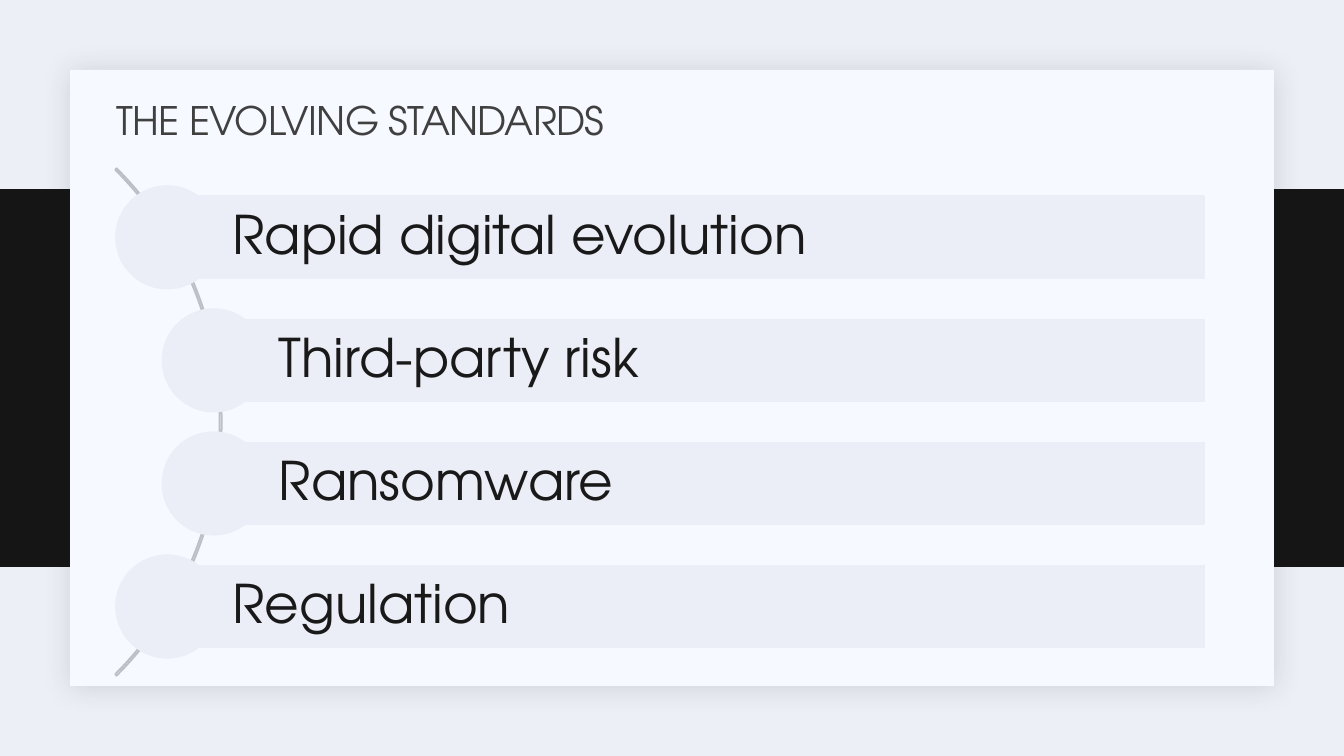
from dataclasses import dataclass

from lxml.etree import SubElement
from pptx import Presentation
from pptx.dml.color import RGBColor
from pptx.enum.shapes import MSO_SHAPE
from pptx.enum.text import MSO_ANCHOR, PP_ALIGN
from pptx.oxml.ns import qn
from pptx.shapes.autoshape import Shape
from pptx.slide import Slide
from pptx.util import Pt

FONT = "TeX Gyre Adventor"
BACKGROUND = RGBColor(0xED, 0xEF, 0xF7)
BAND = RGBColor(0x14, 0x15, 0x14)
PANEL = RGBColor(0xF6, 0xF9, 0xFF)
BAR = RGBColor(0xEC, 0xEE, 0xF7)
ARC = RGBColor(0xBD, 0xBF, 0xC6)
TITLE = RGBColor(0x40, 0x40, 0x40)
TEXT = RGBColor(0x19, 0x19, 0x19)

# List geometry, in points
CENTER_Y = 301.4
PITCH = 87.9
BAR_HEIGHT = 58.6
BAR_RIGHT = 860.4
OUTER_X, INNER_X = 119.5, 152.7
CIRCLE = 73.2
ARC_SIZE = 512.6
ARC_CENTER_X = -97.9


@dataclass(frozen=True)
class Item:
    text: str
    left: float


ITEMS = [
    Item("Rapid digital evolution", OUTER_X),
    Item("Third-party risk", INNER_X),
    Item("Ransomware", INNER_X),
    Item("Regulation", OUTER_X),
]


def add_box(s: Slide, kind: MSO_SHAPE, left: float, top: float, width: float,
            height: float, fill: RGBColor | None = None,
            line: RGBColor | None = None) -> Shape:
    sp = s.shapes.add_shape(kind, Pt(left), Pt(top), Pt(width), Pt(height))
    sp.shadow.inherit = False
    if fill is None:
        sp.fill.background()
    else:
        sp.fill.solid()
        sp.fill.fore_color.rgb = fill
    if line is None:
        sp.line.fill.background()
    else:
        sp.line.color.rgb = line
        sp.line.width = Pt(1.25)
    return sp


def add_shadow(sp: Shape) -> None:
    effects = sp.element.spPr.find(qn("a:effectLst"))
    shadow = SubElement(effects, qn("a:outerShdw"), blurRad=str(Pt(20)),
                        dist=str(Pt(2)), dir="2700000", algn="ctr", rotWithShape="0")
    color = SubElement(shadow, qn("a:srgbClr"), val="1F2125")
    SubElement(color, qn("a:alpha"), val="15000")


def set_text(sp: Shape, text: str, size: float, color: RGBColor) -> None:
    tf = sp.text_frame
    tf.word_wrap = True
    tf.vertical_anchor = MSO_ANCHOR.MIDDLE
    p = tf.paragraphs[0]
    p.alignment = PP_ALIGN.LEFT
    p.line_spacing = 0.9
    r = p.add_run()
    r.text = text
    r.font.name = FONT
    r.font.size = Pt(size)
    r.font.color.rgb = color


def add_title(s: Slide, text: str) -> None:
    sp = s.shapes.title
    sp.left, sp.top, sp.width, sp.height = Pt(76.3), Pt(64.8), Pt(450), Pt(46)
    set_text(sp, text, 28, TITLE)
    r = sp.text_frame.paragraphs[0].runs[0]
    r.font._element.set("spc", "-50")
    # Bring the title in front of the panel
    sp.element.getparent().append(sp.element)


def add_item(s: Slide, item: Item, center_y: float) -> None:
    bar = add_box(s, MSO_SHAPE.RECTANGLE, item.left, center_y - BAR_HEIGHT / 2,
                  BAR_RIGHT - item.left, BAR_HEIGHT, BAR, BAR)
    set_text(bar, item.text, 38, TEXT)
    tf = bar.text_frame
    tf.margin_left = Pt(46.5)
    tf.margin_top = tf.margin_right = tf.margin_bottom = Pt(8)
    tf.paragraphs[0].space_after = Pt(13.3)
    add_box(s, MSO_SHAPE.OVAL, item.left - CIRCLE / 2, center_y - CIRCLE / 2,
            CIRCLE, CIRCLE, BAR, BAR)


def main() -> None:
    prs = Presentation()
    prs.slide_width, prs.slide_height = Pt(960), Pt(540)
    s = prs.slides.add_slide(prs.slide_layouts[5])
    s.background.fill.solid()
    s.background.fill.fore_color.rgb = BACKGROUND

    # Backdrop
    add_box(s, MSO_SHAPE.RECTANGLE, 0, 135, 960, 270, BAND)
    add_shadow(add_box(s, MSO_SHAPE.RECTANGLE, 50, 50, 860, 440, PANEL))
    add_title(s, "THE EVOLVING STANDARDS")

    # Arc behind the list
    arc = add_box(s, MSO_SHAPE.BLOCK_ARC, ARC_CENTER_X - ARC_SIZE / 2,
                  CENTER_Y - ARC_SIZE / 2, ARC_SIZE, ARC_SIZE, line=ARC)
    for i, value in enumerate((189, 27, 0.003)):
        arc.adjustments[i] = value

    # List items, spread evenly about the centre
    for i, item in enumerate(ITEMS):
        add_item(s, item, CENTER_Y + (i - (len(ITEMS) - 1) / 2) * PITCH)

    prs.save("out.pptx")


if __name__ == "__main__":
    main()
